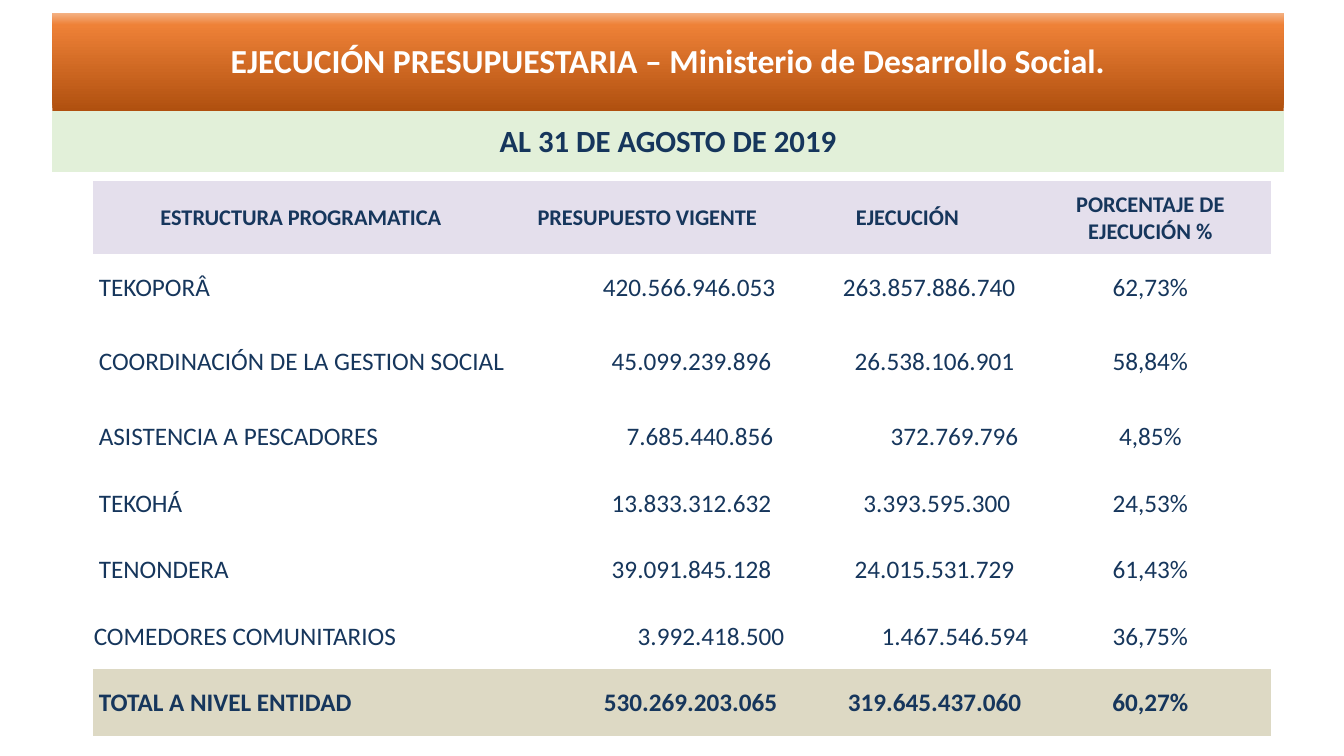
"""Build the budget execution slide of the Ministerio de Desarrollo Social."""
import lxml.etree
import pptx
import pptx.dml.color
import pptx.enum.text
import pptx.oxml
import pptx.oxml.ns
import pptx.util

Inches = pptx.util.Inches
LEFT = pptx.enum.text.PP_ALIGN.LEFT
CENTER = pptx.enum.text.PP_ALIGN.CENTER
RIGHT = pptx.enum.text.PP_ALIGN.RIGHT
NAVY = "16365C"
NO_STYLE = "{2D5ABB26-0587-4C30-8999-92F81FD0307C}"


def add_plain_table(left, top, widths, heights):
    frame = slide.shapes.add_table(len(heights), len(widths), Inches(left), Inches(top),
                                   Inches(sum(widths)), Inches(sum(heights)))
    table = frame.table
    table.first_row = False
    table.horz_banding = False
    table._tbl.tblPr.find(pptx.oxml.ns.qn("a:tableStyleId")).text = NO_STYLE
    for column, width in zip(table.columns, widths):
        column.width = Inches(width)
    for row, height in zip(table.rows, heights):
        row.height = Inches(height)
    return table


def fill_cell(cell, text, size, color, bold, background, alignment=CENTER, inset=0.01):
    cell.vertical_anchor = pptx.enum.text.MSO_ANCHOR.MIDDLE
    cell.margin_left = Inches(inset if alignment == LEFT else 0.01)
    cell.margin_right = Inches(inset if alignment == RIGHT else 0.01)
    cell.margin_top = Inches(0.01)
    cell.margin_bottom = 0
    if background:
        cell.fill.solid()
        cell.fill.fore_color.rgb = pptx.dml.color.RGBColor.from_string(background)
    paragraph = cell.text_frame.paragraphs[0]
    paragraph.alignment = alignment
    run = paragraph.add_run()
    run.text = text
    run.font.name = "Calibri"
    run.font.size = pptx.util.Pt(size)
    run.font.bold = bold
    run.font.color.rgb = pptx.dml.color.RGBColor.from_string(color)


presentation = pptx.Presentation()
presentation.slide_width = Inches(13.33)
presentation.slide_height = Inches(7.5)
slide = presentation.slides.add_slide(presentation.slide_layouts[6])

headings = ["ESTRUCTURA PROGRAMATICA", "PRESUPUESTO VIGENTE", "EJECUCIÓN",
            "PORCENTAJE DE EJECUCIÓN %"]
programs = [
    ("TEKOPORÂ", "420.566.946.053", "263.857.886.740", "62,73%"),
    ("COORDINACIÓN DE LA GESTION SOCIAL", "45.099.239.896", "26.538.106.901", "58,84%"),
    ("ASISTENCIA A PESCADORES", "7.685.440.856", "372.769.796", "4,85%"),
    ("TEKOHÁ", "13.833.312.632", "3.393.595.300", "24,53%"),
    ("TENONDERA", "39.091.845.128", "24.015.531.729", "61,43%"),
    ("COMEDORES COMUNITARIOS", "3.992.418.500", "1.467.546.594", "36,75%"),
    ("TOTAL A NIVEL ENTIDAD", "530.269.203.065", "319.645.437.060", "60,27%"),
]
insets = [
    (0.06, 0.1, 0.14),
    (0.06, 0.14, 0.15),
    (0.06, 0.12, 0.11),
    (0.06, 0.14, 0.19),
    (0.06, 0.14, 0.15),
    (0.01, 0.01, 0.01),
    (0.06, 0.08, 0.08),
]
alignments = [LEFT, RIGHT, RIGHT, CENTER]

budget = add_plain_table(0.92, 1.8, [4.13, 2.74, 2.42, 2.4], [0.72, 0.66, 0.82] + [0.66] * 5)
for column, heading in enumerate(headings):
    fill_cell(budget.cell(0, column), heading, 16, NAVY, True, "E4DFEC")
for row, (program, row_insets) in enumerate(zip(programs, insets), start=1):
    is_total = row == len(programs)
    background = "DDD9C4" if is_total else "FFFFFF"
    for column, text in enumerate(program):
        inset = row_insets[column] if column < 3 else 0.01
        fill_cell(budget.cell(row, column), text, 18, NAVY, is_total, background,
                  alignments[column], inset)

banner = add_plain_table(0.52, 0.13, [12.21], [0.97, 0.61])
title_cell = banner.cell(0, 0)
fill_cell(title_cell, "EJECUCIÓN PRESUPUESTARIA – Ministerio de Desarrollo Social.",
          24, "FFFFFF", True, None)
fill_cell(banner.cell(1, 0), "AL 31 DE AGOSTO DE 2019", 22, NAVY, True, "E2F0D9")

qn = pptx.oxml.ns.qn
gradient = lxml.etree.SubElement(title_cell._tc.get_or_add_tcPr(), qn("a:gradFill"))
stops = lxml.etree.SubElement(gradient, qn("a:gsLst"))
for percent, color in [(0, "B0500F"), (88, "EE8137"), (100, "F4B183")]:
    stop = lxml.etree.SubElement(stops, qn("a:gs"), pos=str(percent * 1000))
    lxml.etree.SubElement(stop, qn("a:srgbClr"), val=color)
lxml.etree.SubElement(gradient, qn("a:lin"), ang=str(270 * 60000), scaled="0")

presentation.save("out.pptx")
